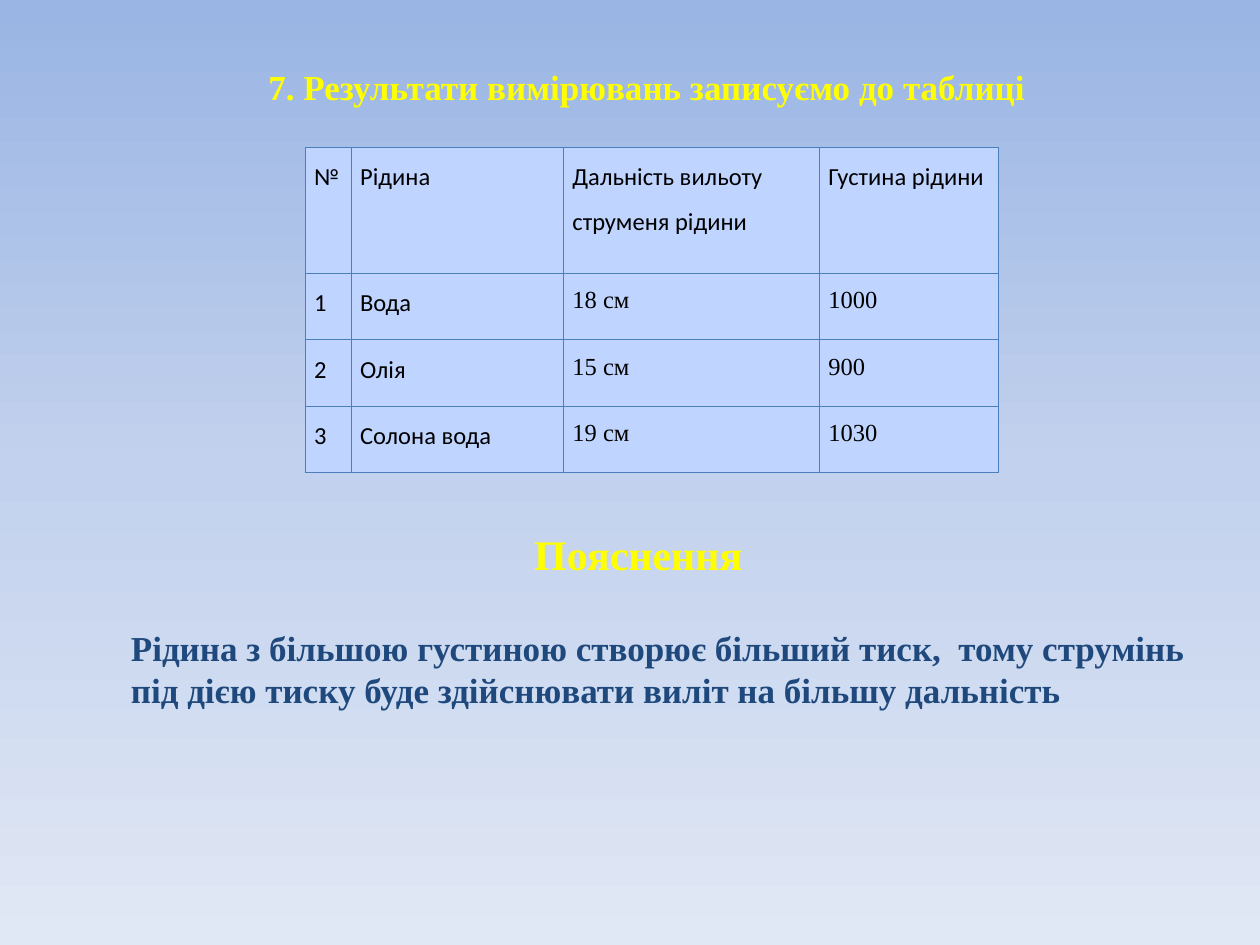
from copy import deepcopy

from lxml import etree
from pptx import Presentation
from pptx.dml.color import RGBColor
from pptx.enum import text
from pptx.oxml import ns
from pptx.util import Cm, Pt

COLORS = {
    "sky": "9AB5E4", "haze": "C2D1ED", "horizon": "E1E8F5",
    "cell": "BFD4FF", "border": "4B7EBC", "ink": "000000",
    "heading": "FFFF00", "body": "1F497D",
}
GRADIENT = [(0, "sky"), (0.5, "haze"), (1, "horizon")]
ROWS = [
    ("№", "Рідина", "Дальність вильоту\nструменя рідини", "Густина рідини"),
    ("1", "Вода", "18 см", "1000"),
    ("2", "Олія", "15 см", "900"),
    ("3", "Солона вода", "19 см", "1030"),
]
COLUMN_WIDTHS = [0.93, 4.28, 5.16, 3.6]
ROW_HEIGHTS = [2.54, 1.34, 1.34, 1.34]
TABLE_ORIGIN = (6.15, 2.97)
CELL_FORMAT = {
    "margin_left": Cm(0.18), "margin_right": Cm(0.18),
    "margin_top": 0, "margin_bottom": 0,
}
LEFT, JUSTIFY = text.PP_ALIGN.LEFT, text.PP_ALIGN.JUSTIFY
TOP, MIDDLE = text.MSO_ANCHOR.TOP, text.MSO_ANCHOR.MIDDLE
TEXTS = [
    (["7. Результати вимірювань записуємо до таблиці"],
     (5.16, 1.19, 15.88, 1.12), 20, "heading", LEFT, MIDDLE, True),
    (["Пояснення"],
     (10.52, 10.52, 4.75, 1.27), 24, "heading", LEFT, TOP, False),
    (["Рідина з більшою густиною створює більший тиск,  тому струмінь",
      "під дією тиску буде здійснювати виліт на більшу дальність"],
     (2.39, 12.5, 22.1, 1.96), 20, "body", JUSTIFY, TOP, False),
]


def rgb(name):
    return RGBColor.from_string(COLORS[name])


def set_attributes(target, values):
    for name, value in values.items():
        setattr(target, name, value)


def write(frame, lines, size, font_name, color, bold, paragraph_format):
    frame.text = "\n".join(lines)
    for paragraph in frame.paragraphs:
        set_attributes(paragraph, paragraph_format)
        set_attributes(paragraph.font, {"size": Pt(size), "name": font_name, "bold": bold})
        paragraph.font.color.rgb = rgb(color)


def add_borders(cell):
    properties = cell._tc.get_or_add_tcPr()
    for index, side in enumerate(("lnL", "lnR", "lnT", "lnB")):
        line = etree.Element(ns.qn(f"a:{side}"), w=str(Pt(0.75)))
        fill = etree.SubElement(line, ns.qn("a:solidFill"))
        etree.SubElement(fill, ns.qn("a:srgbClr"), val=COLORS["border"])
        properties.insert(index, line)


def paint_background(slide):
    fill = slide.background.fill
    fill.gradient()
    fill.gradient_angle = 270
    stop_list = slide.element.find(".//" + ns.qn("a:gsLst"))
    stop_list.append(deepcopy(stop_list[-1]))
    for stop, (position, color) in zip(fill.gradient_stops, GRADIENT):
        stop.position = position
        stop.color.rgb = rgb(color)


def add_results(slide):
    size = (sum(COLUMN_WIDTHS), sum(ROW_HEIGHTS))
    table = slide.shapes.add_table(
        len(ROWS), len(COLUMN_WIDTHS), *map(Cm, TABLE_ORIGIN + size)).table
    set_attributes(table, {"first_row": False, "horz_banding": False})
    for column, width in zip(table.columns, COLUMN_WIDTHS):
        column.width = Cm(width)
    for row, height in zip(table.rows, ROW_HEIGHTS):
        row.height = Cm(height)
    for row_index, values in enumerate(ROWS):
        for column_index, value in enumerate(values):
            cell = table.cell(row_index, column_index)
            set_attributes(cell, CELL_FORMAT)
            cell.fill.solid()
            cell.fill.fore_color.rgb = rgb("cell")
            add_borders(cell)
            measured = row_index > 0 and column_index > 1
            font_name = "Times New Roman" if measured else "Calibri"
            write(cell.text_frame, value.split("\n"), 14, font_name, "ink", False,
                  {"line_spacing": 1.5})


def add_text(slide, lines, box, size, color, alignment, anchor, wrap):
    frame = slide.shapes.add_textbox(*map(Cm, box)).text_frame
    set_attributes(frame, {
        "word_wrap": wrap, "vertical_anchor": anchor,
        "auto_size": text.MSO_AUTO_SIZE.SHAPE_TO_FIT_TEXT,
    })
    write(frame, lines, size, "Times New Roman", color, True, {"alignment": alignment})


def main():
    presentation = Presentation()
    set_attributes(presentation, {"slide_width": Cm(25.4), "slide_height": Cm(19.05)})
    slide = presentation.slides.add_slide(presentation.slide_layouts[6])
    paint_background(slide)
    add_results(slide)
    for entry in TEXTS:
        add_text(slide, *entry)
    presentation.save("out.pptx")


if __name__ == "__main__":
    main()
